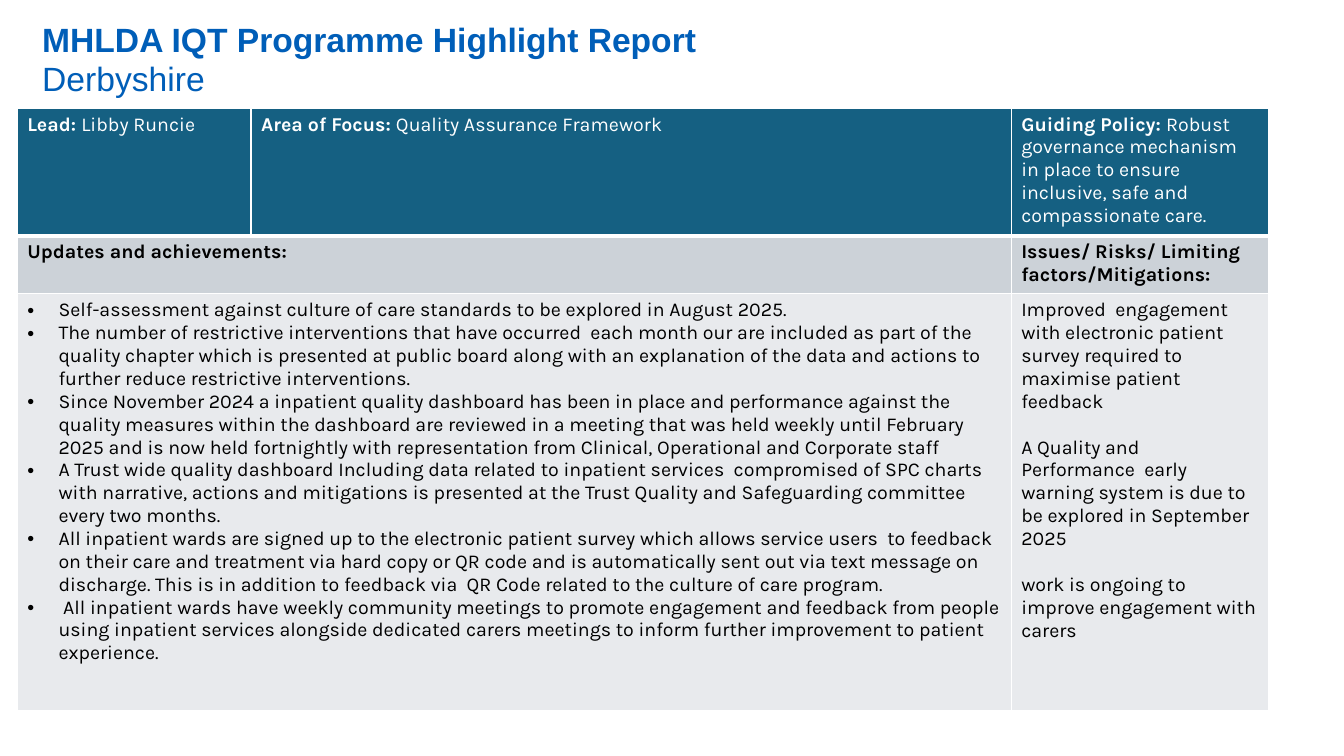
from dataclasses import dataclass

from lxml import etree
from pptx import Presentation
from pptx import util as u
from pptx.dml import color
from pptx.enum import text
from pptx.oxml import ns


@dataclass(frozen=True)
class Theme:
    title_font: str = "Arial"
    body_font: str = "Karla"
    title_size: float = 24
    body_size: float = 14
    title: str = "005EB8"
    white: str = "FFFFFF"
    ink: str = "000000"
    header: str = "156082"
    subheader: str = "CCD2D8"
    panel: str = "E8EAED"


THEME = Theme()
WIDTH, HEIGHT = u.Inches(13.33), u.Inches(7.5)
COLUMNS = (17.4, 56.56, 19.13)
ROWS = (16.67, 7.67, 55.07)
TABLE_LEFT, TABLE_TOP = 1.28, 14.3
HANG = u.Inches(0.31)
THIN, THICK = 1, 3

HEADINGS = (
    ("Lead: ", "Libby Runcie"),
    ("Area of Focus: ", "Quality Assurance Framework"),
    ("Guiding Policy: ", "Robust governance mechanism in place to ensure inclusive, "
     "safe and compassionate care."),
)
UPDATES = (
    "Self-assessment against culture of care standards to be explored in August 2025.",
    "The number of restrictive interventions that have occurred  each month our are "
    "included as part of the quality chapter which is presented at public board along "
    "with an explanation of the data and actions to further reduce restrictive "
    "interventions.",
    "Since November 2024 a inpatient quality dashboard has been in place and performance "
    "against the quality measures within the dashboard are reviewed in a meeting that was "
    "held weekly until February 2025 and is now held fortnightly with representation from "
    "Clinical, Operational and Corporate staff",
    "A Trust wide quality dashboard Including data related to inpatient services  "
    "compromised of SPC charts with narrative, actions and mitigations is presented at "
    "the Trust Quality and Safeguarding committee every two months.",
    "All inpatient wards are signed up to the electronic patient survey which allows "
    "service users  to feedback on their care and treatment via hard copy or QR code and "
    "is automatically sent out via text message on discharge. This is in addition to "
    "feedback via  QR Code related to the culture of care program.",
    " All inpatient wards have weekly community meetings to promote engagement and "
    "feedback from people using inpatient services alongside dedicated carers meetings "
    "to inform further improvement to patient experience.",
)
ISSUES = (
    "Improved  engagement with electronic patient survey required to maximise patient "
    "feedback",
    "A Quality and Performance  early warning system is due to be explored in "
    "September 2025",
    "work is ongoing to improve engagement with carers",
)


def across(percent):
    return round(WIDTH * percent / 100)


def down(percent):
    return round(HEIGHT * percent / 100)


def apply(target, values):
    for name, value in values.items():
        setattr(target, name, value)


def add_span(para, words, ink, **font):
    span = para.add_run()
    span.text = words
    apply(span.font, font)
    span.font.color.rgb = color.RGBColor.from_string(ink)


def paragraphs(frame, count):
    return [frame.paragraphs[0]] + [frame.add_paragraph() for _ in range(count - 1)]


def body_span(para, words, ink=THEME.ink, bold=False):
    add_span(para, words, ink, name=THEME.body_font,
             size=u.Pt(THEME.body_size), bold=bold)


def add_bullet(para):
    properties = para._p.get_or_add_pPr()
    apply_indent = {"marL": HANG, "indent": -HANG}
    for name, value in apply_indent.items():
        properties.set(name, str(int(value)))
    font = etree.SubElement(properties, ns.qn("a:buFont"))
    font.set("typeface", THEME.title_font)
    bullet = etree.SubElement(properties, ns.qn("a:buChar"))
    bullet.set("char", "•")


def add_borders(cell, top, bottom):
    properties = cell._tc.get_or_add_tcPr()
    sides = {"lnL": THIN, "lnR": THIN, "lnT": top, "lnB": bottom}
    for place, (side, points) in enumerate(sides.items()):
        line = etree.Element(ns.qn(f"a:{side}"), w=str(int(u.Pt(points))))
        fill = etree.SubElement(line, ns.qn("a:solidFill"))
        etree.SubElement(fill, ns.qn("a:srgbClr"), val=THEME.white)
        properties.insert(place, line)


def add_title(page):
    box = page.shapes.add_textbox(0, down(2.53), across(61.6), down(11.87))
    frame = box.text_frame
    apply(frame, {"word_wrap": True, "margin_top": u.Inches(0.01)})
    lines = (("MHLDA IQT Programme Highlight Report", True, 3), ("Derbyshire", False, 0))
    for para, (words, bold, before) in zip(paragraphs(frame, len(lines)), lines):
        apply(para, {"line_spacing": u.Pt(27.9), "space_before": u.Pt(before)})
        para._p.get_or_add_pPr().set("marL", str(int(u.Inches(0.32))))
        add_span(para, words, THEME.title, name=THEME.title_font,
                 size=u.Pt(THEME.title_size), bold=bold)


def add_grid(page):
    frame = page.shapes.add_table(
        len(ROWS), len(COLUMNS), across(TABLE_LEFT), down(TABLE_TOP),
        across(sum(COLUMNS)), down(sum(ROWS)))
    table = frame.table
    apply(table, {"first_row": False, "horz_banding": False})
    for column, share in zip(table.columns, COLUMNS):
        column.width = across(share)
    for row, share in zip(table.rows, ROWS):
        row.height = down(share)
    edges = ((THEME.header, THIN, THICK), (THEME.subheader, THICK, THIN),
             (THEME.panel, THIN, THIN))
    for row, (fill, top, bottom) in zip(table.rows, edges):
        for cell in row.cells:
            cell.fill.solid()
            cell.fill.fore_color.rgb = color.RGBColor.from_string(fill)
            cell.vertical_anchor = text.MSO_ANCHOR.TOP
            add_borders(cell, top, bottom)
    for row in (1, 2):
        table.cell(row, 0).merge(table.cell(row, 1))
    return table


def fill_headings(table):
    for column, (label, words) in enumerate(HEADINGS):
        para = table.cell(0, column).text_frame.paragraphs[0]
        body_span(para, label, THEME.white, bold=True)
        body_span(para, words, THEME.white)
    labels = {0: "Updates and achievements:",
              2: "Issues/ Risks/ Limiting factors/Mitigations:"}
    for column, label in labels.items():
        body_span(table.cell(1, column).text_frame.paragraphs[0], label, bold=True)


def fill_updates(cell):
    for para, words in zip(paragraphs(cell.text_frame, len(UPDATES)), UPDATES):
        add_bullet(para)
        body_span(para, words)


def fill_issues(cell):
    for order, para in enumerate(paragraphs(cell.text_frame, len(ISSUES))):
        para.space_before = u.Pt(16.4 if order else 0)
        body_span(para, ISSUES[order])


def main():
    deck = Presentation()
    apply(deck, {"slide_width": WIDTH, "slide_height": HEIGHT})
    page = deck.slides.add_slide(deck.slide_layouts[6])
    add_title(page)
    table = add_grid(page)
    fill_headings(table)
    fill_updates(table.cell(2, 0))
    fill_issues(table.cell(2, 2))
    deck.save("out.pptx")


if __name__ == "__main__":
    main()
